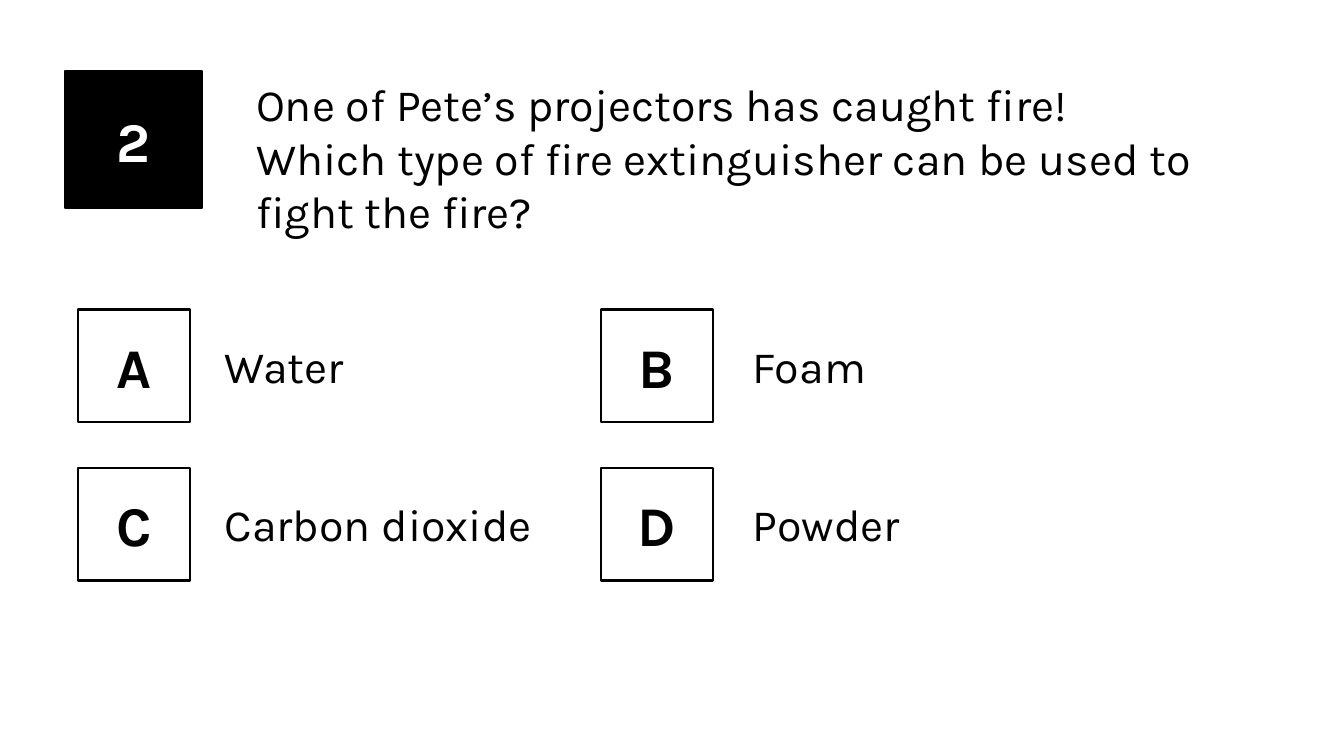
from pptx import Presentation
from pptx.dml.color import RGBColor
from pptx.enum.shapes import MSO_SHAPE
from pptx.enum.text import MSO_ANCHOR, MSO_AUTO_SIZE, PP_ALIGN
from pptx.util import Cm, Pt

BLACK = RGBColor(0x00, 0x00, 0x00)
WHITE = RGBColor(0xFF, 0xFF, 0xFF)
FONT = "Karla"


def add_text(paragraph, text, size, color, bold=False):
    run = paragraph.add_run()
    run.text = text
    run.font.name = FONT
    run.font.size = Pt(size)
    run.font.bold = bold
    run.font.color.rgb = color


def add_label_box(slide, label, left, top, side, fill, color):
    shape = slide.shapes.add_shape(
        MSO_SHAPE.RECTANGLE, Cm(left), Cm(top), Cm(side), Cm(side)
    )
    shape.shadow.inherit = False
    shape.fill.solid()
    shape.fill.fore_color.rgb = fill
    shape.line.color.rgb = BLACK
    shape.line.width = Pt(1.5)
    shape.text_frame.vertical_anchor = MSO_ANCHOR.MIDDLE
    paragraph = shape.text_frame.paragraphs[0]
    paragraph.alignment = PP_ALIGN.CENTER
    add_text(paragraph, label, 40, color, bold=True)


presentation = Presentation()
presentation.slide_width = Cm(33.87)
presentation.slide_height = Cm(19.05)
slide = presentation.slides.add_slide(presentation.slide_layouts[5])
slide.background.fill.solid()
slide.background.fill.fore_color.rgb = WHITE

title = slide.shapes.title
title.left, title.top, title.width, title.height = Cm(6.2), Cm(1.8), Cm(26), Cm(4.37)
question_frame = title.text_frame
question_frame.word_wrap = True
question_frame.auto_size = MSO_AUTO_SIZE.NONE
question_frame.vertical_anchor = MSO_ANCHOR.TOP
question_lines = [
    "One of Pete’s projectors has caught fire!",
    "Which type of fire extinguisher can be used to fight the fire?",
]
question_frame.add_paragraph()
for paragraph, line in zip(question_frame.paragraphs, question_lines):
    paragraph.alignment = PP_ALIGN.LEFT
    add_text(paragraph, line, 32, BLACK)

add_label_box(slide, "2", 1.65, 1.8, 3.45, BLACK, WHITE)

answers = [
    ("A", "Water", 7.26),
    ("B", "Foam", 8.94),
    ("C", "Carbon dioxide", 8.53),
    ("D", "Powder", 12.52),
]
box_lefts = [1.96, 15.14]
answer_lefts = [5.41, 18.72]
first_row_top = 7.8
row_pitch = 3.99

for index, (letter, answer, width) in enumerate(answers):
    row, column = divmod(index, 2)
    top = first_row_top + row * row_pitch
    add_label_box(slide, letter, box_lefts[column], top, 2.84, WHITE, BLACK)
    answer_box = slide.shapes.add_textbox(
        Cm(answer_lefts[column]), Cm(top + 0.6), Cm(width), Cm(1.63)
    )
    answer_box.text_frame.word_wrap = True
    add_text(answer_box.text_frame.paragraphs[0], answer, 32, BLACK)

presentation.save("out.pptx")
